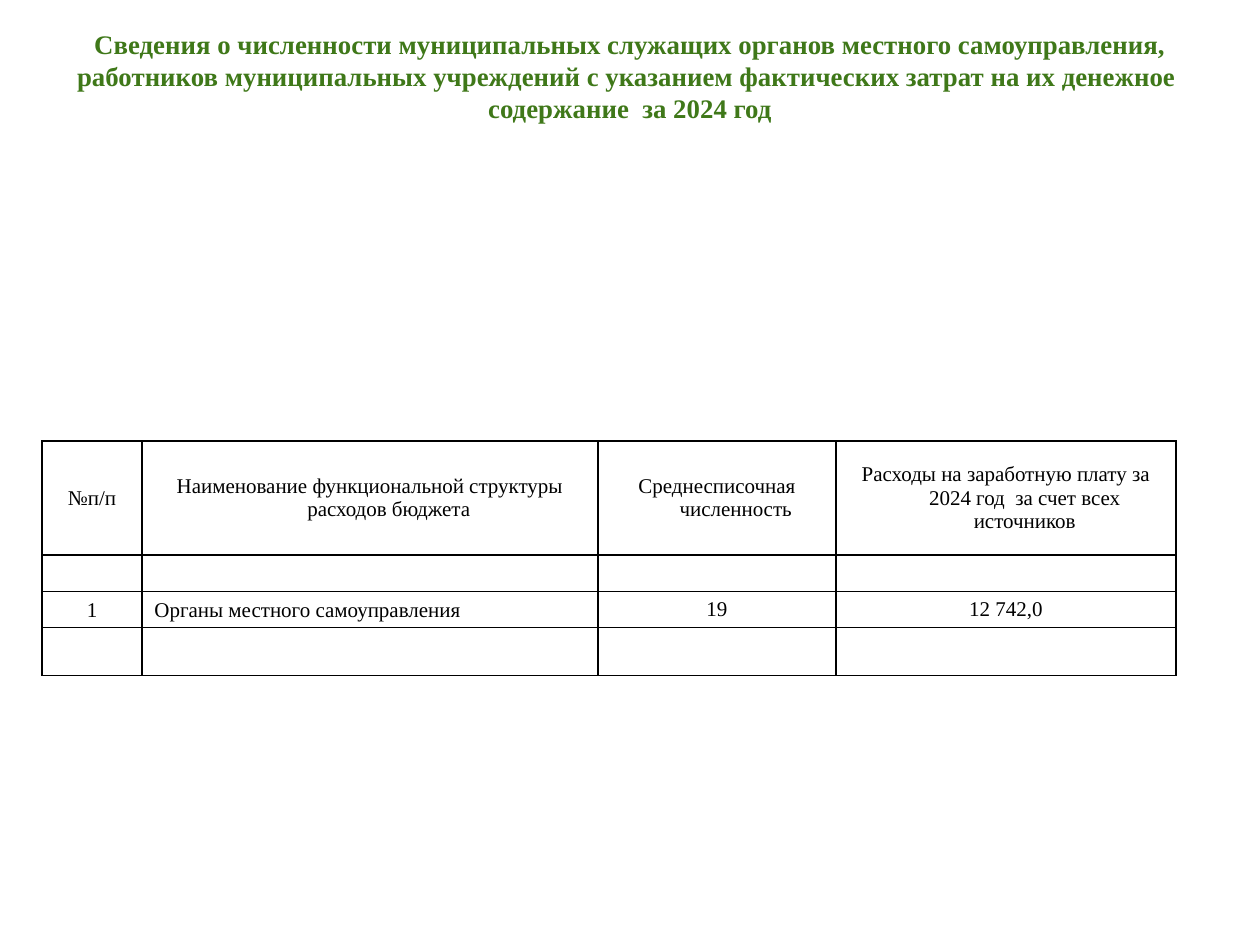
import pptx
import pptx.util
import pptx.dml.color
import pptx.enum.text
import pptx.oxml
import pptx.oxml.ns
from pptx.util import Cm, Pt

ALIGN = pptx.enum.text.PP_ALIGN
ANCHOR = pptx.enum.text.MSO_ANCHOR
FONT = "Times New Roman"
COLORS = {"title": "3F7819", "text": "000000", "border": "000000"}
NO_STYLE = "{2D5ABB26-0587-4C30-8999-92F81FD0307C}"

# Content
TITLE = ("Сведения о численности муниципальных служащих органов местного "
         "самоуправления, работников муниципальных учреждений с указанием "
         "фактических затрат на их денежное  содержание  за 2024 год")
EMPTY = [""] * 4
HEADER = ["№п/п", "Наименование функциональной структуры расходов бюджета",
          "Среднесписочная численность",
          "Расходы на заработную плату за 2024 год  за счет всех источников"]
DATA = ["1", "Органы местного самоуправления", "19", "12 742,0"]
ROWS = [EMPTY, EMPTY, EMPTY, HEADER, EMPTY, DATA, EMPTY]
ROW_HEIGHTS = [2.16, 1.04, 1.04, 2.3, 0.73, 0.73, 0.97]
COL_WIDTHS = [2.01, 9.2, 4.79, 6.86]
HEADER_ROW, DATA_ROW = ROWS.index(HEADER), ROWS.index(DATA)


def style_run(r, size, color, bold=False):
    r.font.name = FONT
    r.font.size = Pt(size)
    r.font.bold = bold
    r.font.color.rgb = pptx.dml.color.RGBColor.from_string(COLORS[color])


def set_borders(cell, sides):
    tcPr = cell._tc.get_or_add_tcPr()
    for i, side in enumerate(sides):
        tcPr.insert(i, pptx.oxml.parse_xml(
            f'<a:ln{side} {pptx.oxml.ns.nsdecls("a")} w="{Pt(1)}"><a:solidFill>'
            f'<a:srgbClr val="{COLORS["border"]}"/></a:solidFill></a:ln{side}>'))


def fill_cell(cell, text, row, col):
    cell.fill.background()
    cell.margin_top = cell.margin_bottom = Cm(0.11)
    p = cell.text_frame.paragraphs[0]
    if not text:
        # Keep empty rows as low as a text row
        p._p.append(pptx.oxml.parse_xml(
            f'<a:endParaRPr {pptx.oxml.ns.nsdecls("a")} sz="1000">'
            f'<a:latin typeface="{FONT}"/></a:endParaRPr>'))
        return
    p.text = text
    style_run(p.runs[0], 12, "text")
    is_number = row == DATA_ROW and col >= 2
    is_name = row == DATA_ROW and col == 1
    p.alignment = ALIGN.LEFT if is_name else ALIGN.CENTER
    if is_number:
        cell.margin_left = cell.margin_right = Cm(0.18)
        cell.margin_top = cell.margin_bottom = 0
    else:
        pPr = p._p.get_or_add_pPr()
        pPr.set("marL", str(Cm(0.76)))
        pPr.set("indent", str(-Cm(0.76)))
    cell.vertical_anchor = (ANCHOR.MIDDLE if row == HEADER_ROW or is_number
                            else ANCHOR.BOTTOM)


prs = pptx.Presentation()
prs.slide_width, prs.slide_height = Cm(25.4), Cm(19.05)
s = prs.slides.add_slide(prs.slide_layouts[6])

# Title
tf = s.shapes.add_textbox(Cm(1.27), Cm(0.43), Cm(22.86), Cm(3.38)).text_frame
tf.word_wrap = True
tf.text = TITLE
p = tf.paragraphs[0]
p.alignment = ALIGN.CENTER
style_run(p.runs[0], 15.3, "title", bold=True)

# Table
frame = s.shapes.add_table(len(ROWS), len(COL_WIDTHS), Cm(0.85), Cm(4.65),
                           Cm(sum(COL_WIDTHS)), Cm(sum(ROW_HEIGHTS)))
table = frame.table
table.first_row = table.horz_banding = False
table._tbl.tblPr.find(pptx.oxml.ns.qn("a:tableStyleId")).text = NO_STYLE
for column, width in zip(table.columns, COL_WIDTHS):
    column.width = Cm(width)
for i, (texts, height) in enumerate(zip(ROWS, ROW_HEIGHTS)):
    table.rows[i].height = Cm(height)
    for j, text in enumerate(texts):
        cell = table.cell(i, j)
        fill_cell(cell, text, i, j)
        if i >= HEADER_ROW:
            set_borders(cell, "LRTB")
        elif i == HEADER_ROW - 1:
            set_borders(cell, "B")
table.cell(0, 0).merge(table.cell(0, len(COL_WIDTHS) - 1))

prs.save("out.pptx")
